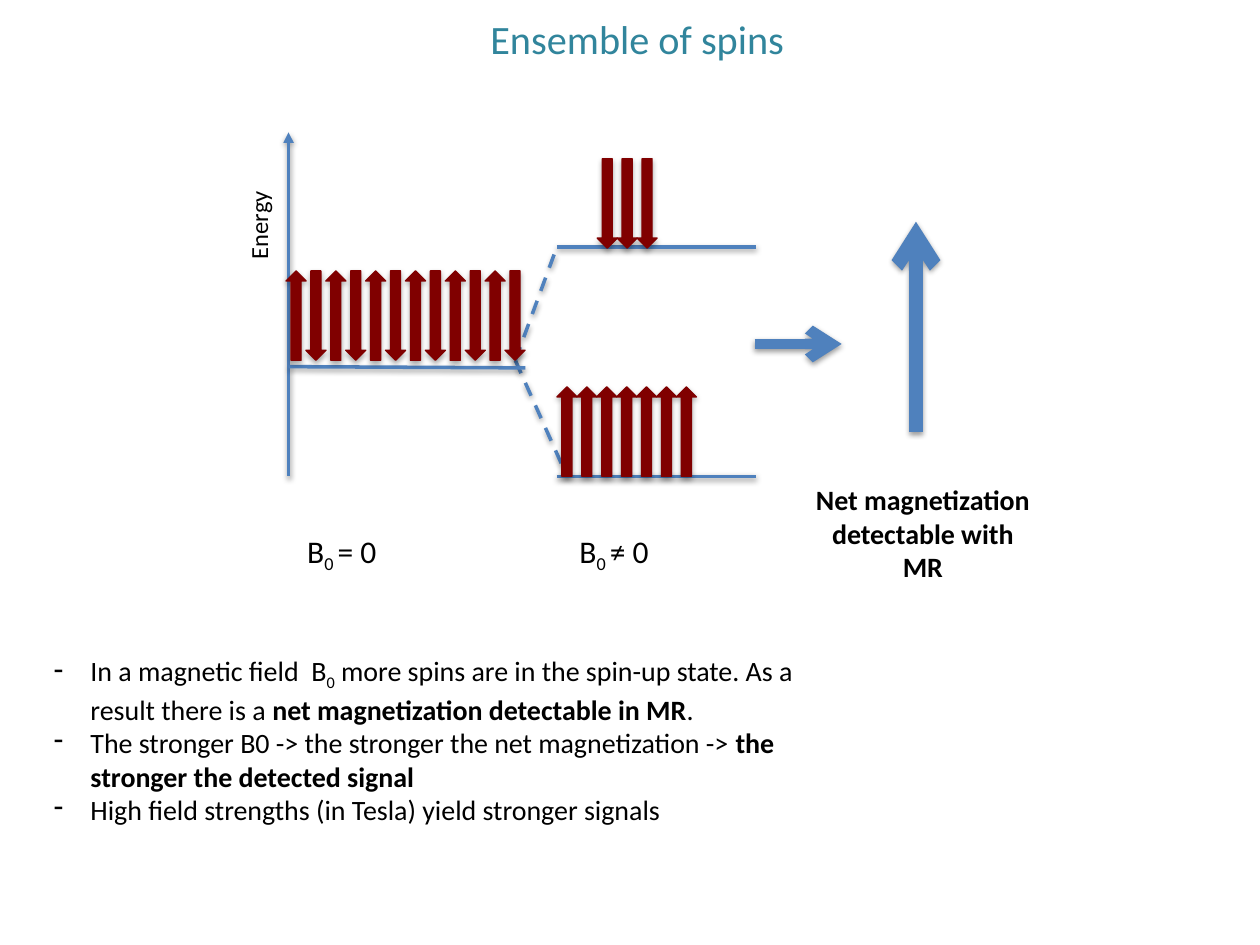
"""Build the slide on an ensemble of spins and its net magnetization."""
from dataclasses import dataclass

from lxml.etree import SubElement
from pptx import Presentation
from pptx.dml.color import RGBColor
from pptx.enum.dml import MSO_LINE
from pptx.enum.shapes import MSO_CONNECTOR, MSO_SHAPE
from pptx.enum.text import MSO_ANCHOR, MSO_AUTO_SIZE, PP_ALIGN
from pptx.oxml.ns import qn
from pptx.util import Pt

PX = 9144


@dataclass(frozen=True)
class Theme:
    font: str = "Calibri"
    heading: str = "31859C"
    ink: str = "000000"
    level: str = "4F81BD"
    spin: str = "800000"
    title_size: int = 23
    label_size: int = 18
    body_size: int = 16
    axis_size: int = 14


def write(frame, paragraphs, *, font, size, color, align=PP_ALIGN.LEFT, bullet=None):
    frame.word_wrap = True
    for index, runs in enumerate(paragraphs):
        paragraph = frame.add_paragraph() if index else frame.paragraphs[0]
        paragraph.alignment = align
        if bullet:
            properties = paragraph._p.get_or_add_pPr()
            properties.set("marL", str(29 * PX))
            properties.set("indent", str(-29 * PX))
            SubElement(properties, qn("a:buChar"), char=bullet)
        for text, style in runs:
            run = paragraph.add_run()
            run.text = text
            run.font.name = font
            run.font.size = Pt(size)
            run.font.bold = style == "bold"
            run.font.color.rgb = RGBColor.from_string(color)
            if style == "sub":
                run.font._element.set("baseline", "-25000")


class SpinSlide:
    def __init__(self, presentation, theme):
        self.theme = theme
        self.slide = presentation.slides.add_slide(presentation.slide_layouts[5])
        self.shapes = self.slide.shapes

    def open_group(self):
        self.shapes = self.slide.shapes.add_group_shape().shapes

    def close_group(self):
        self.shapes = self.slide.shapes

    def shade(self, item, distance, opacity):
        properties = item._element.spPr
        effects = properties.find(qn("a:effectLst"))
        if effects is None:
            effects = SubElement(properties, qn("a:effectLst"))
        shadow = SubElement(effects, qn("a:outerShdw"), blurRad="40000",
                            dist=str(distance), dir="5400000", rotWithShape="0")
        shade = SubElement(shadow, qn("a:srgbClr"), val=self.theme.ink)
        SubElement(shade, qn("a:alpha"), val=str(opacity * 1000))

    def title(self, text, left, top, width, height):
        heading = self.slide.shapes.title
        heading.left, heading.top = left * PX, top * PX
        heading.width, heading.height = width * PX, height * PX
        heading.text_frame.auto_size = MSO_AUTO_SIZE.NONE
        heading.text_frame.vertical_anchor = MSO_ANCHOR.MIDDLE
        write(heading.text_frame, [[(text, "")]], font=self.theme.font,
              size=self.theme.title_size, color=self.theme.heading, align=PP_ALIGN.CENTER)

    def text(self, paragraphs, left, top, width, height, size, rotation=0, **layout):
        label = self.shapes.add_textbox(left * PX, top * PX, width * PX, height * PX)
        label.rotation = rotation
        label.text_frame.auto_size = MSO_AUTO_SIZE.SHAPE_TO_FIT_TEXT
        write(label.text_frame, paragraphs, font=self.theme.font, size=size,
              color=self.theme.ink, **layout)

    def line(self, start, end, weight=2, dashed=False, **arrowheads):
        stroke = self.shapes.add_connector(
            MSO_CONNECTOR.STRAIGHT, *(value * PX for value in start + end))
        stroke.line.color.rgb = RGBColor.from_string(self.theme.level)
        stroke.line.width = Pt(weight)
        if dashed:
            stroke.line.dash_style = MSO_LINE.DASH
        for end_name, kind in arrowheads.items():
            SubElement(stroke.line._get_or_add_ln(), qn(f"a:{end_name}"), type=kind)
        self.shade(stroke, 20000, 38)

    def spins(self, directions, left, top):
        pitch = 15.8
        for index, direction in enumerate(directions):
            spin = self.shapes.add_shape(
                MSO_SHAPE.UP_ARROW, round((left + index * pitch) * PX), top * PX,
                16 * PX, 71 * PX)
            spin.shadow.inherit = False
            spin.fill.solid()
            spin.fill.fore_color.rgb = RGBColor.from_string(self.theme.spin)
            spin.line.color.rgb = RGBColor.from_string(self.theme.spin)
            spin.line.width = Pt(0.75)
            if direction == "down":
                spin._element.spPr.find(qn("a:xfrm")).set("flipV", "1")
            self.shade(spin, 23000, 35)


def field_label(relation):
    return [[("B", ""), ("0 ", "sub"), (relation, "")]]


def main():
    presentation = Presentation()
    presentation.slide_width, presentation.slide_height = 1000 * PX, 750 * PX
    theme = Theme()
    board = SpinSlide(presentation, theme)

    board.title("Ensemble of spins", 56, 0, 900, 61)
    board.line((409, 286), (450, 378), dashed=True)
    board.line((409, 286), (442, 196), dashed=True)
    board.line((229, 105), (229, 378), headEnd="triangle")
    board.line((229, 291), (417, 292))
    board.spins(["up", "down"] * 6, 227, 215)
    board.text([[("Energy", "")]], 166, 159, 79, 34, theme.axis_size, rotation=270)
    board.text(field_label("= 0"), 234, 417, 94, 40, theme.label_size)

    board.open_group()
    for energy in (196, 378):
        board.line((442, energy), (600, energy))
    board.spins(["up"] * 7, 442, 307)
    board.spins(["down"] * 3, 474, 126)
    board.text(field_label("≠ 0"), 450, 417, 135, 40, theme.label_size)
    board.close_group()

    findings = [
        [("In a magnetic field  B", ""), ("0", "sub"),
         (" more spins are in the spin-up state. As a result there is a ", ""),
         ("net magnetization detectable in MR", "bold"), (".", "")],
        [("The stronger B0 -> the stronger the net magnetization -> ", ""),
         ("the stronger the detected signal", "bold")],
        [("High field strengths (in Tesla) yield stronger signals", "")],
    ]
    board.text(findings, 33, 514, 624, 172, theme.body_size, bullet="-")
    board.line((599, 273), (668, 273), weight=6, tailEnd="arrow")
    board.line((727, 343), (727, 176), weight=8, tailEnd="arrow")
    board.text([[("Net magnetization detectable with MR", "bold")]],
               636, 378, 193, 91, theme.body_size, align=PP_ALIGN.CENTER)

    presentation.save("out.pptx")


if __name__ == "__main__":
    main()
